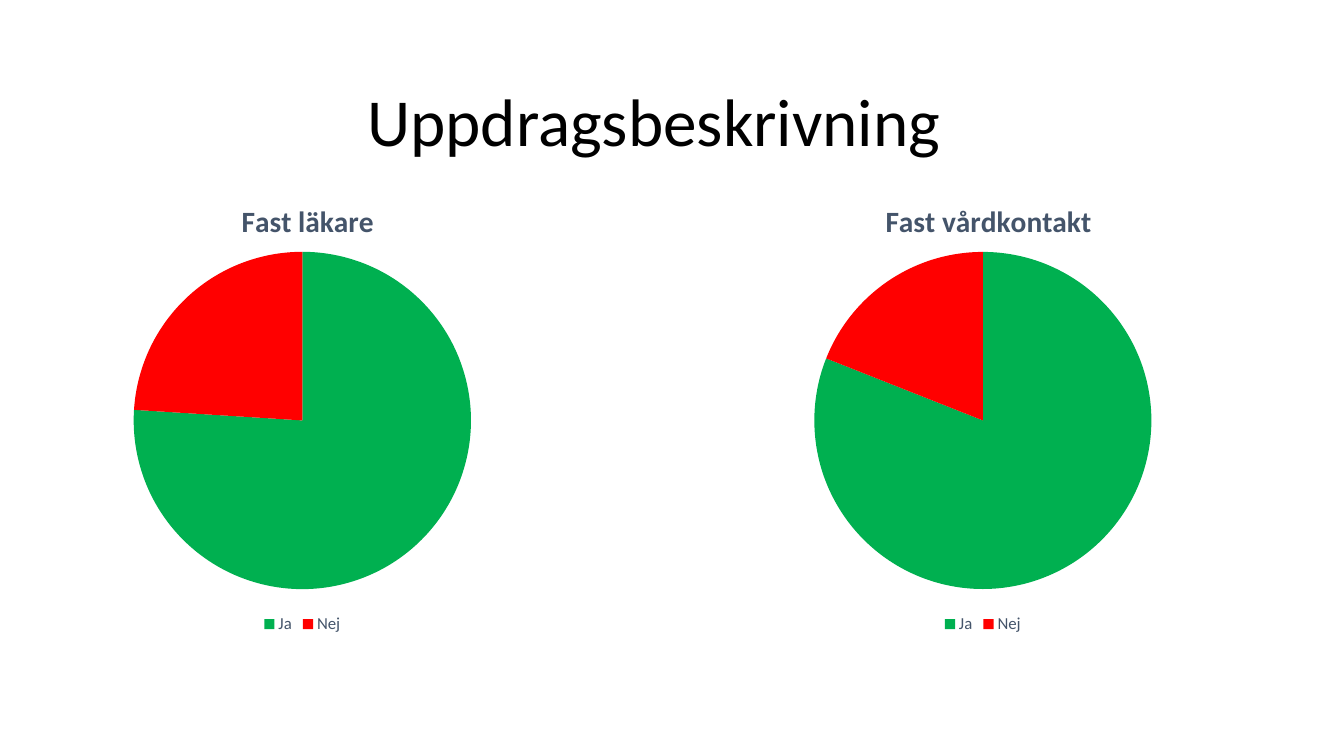
from dataclasses import dataclass

from lxml import etree
from pptx import Presentation
from pptx import util as u
from pptx.chart.data import CategoryChartData
from pptx.dml.color import RGBColor
from pptx.enum import chart as ch, text
from pptx.oxml import ns

FONT = "Calibri"
BLACK = RGBColor(0x00, 0x00, 0x00)
SLATE = RGBColor(0x44, 0x54, 0x6A)
GREEN = RGBColor(0x00, 0xB0, 0x50)
RED = RGBColor(0xFF, 0x00, 0x00)

TOP, HIGH = 4.45, 11.63  # both charts, cm
DISC = 8.5  # pie diameter, cm


@dataclass
class Pie:
    title: str
    span: float  # title width, cm
    left: float
    width: float
    shares: tuple[int, int]


PIES = [
    Pie("Fast läkare", 3.33, 0, 15.24, (76, 24)),
    Pie("Fast vårdkontakt", 5.18, 16.03, 17.48, (81, 19)),
]


def write(frame, words: str, *, size: float, color: RGBColor,
          bold: bool = False, align=text.PP_ALIGN.LEFT) -> None:
    frame.text = words
    para = frame.paragraphs[0]
    para.alignment = align
    font = para.runs[0].font
    font.name, font.size, font.bold = FONT, u.Pt(size), bold
    font.color.rgb = color


def place(item, index: int, **parts: object) -> None:
    """Give a chart part a manual layout, set as its child at index."""
    old = item.find(ns.qn("c:layout"))
    if old is not None:
        item.remove(old)
    layout = etree.Element(ns.qn("c:layout"))
    manual = etree.SubElement(layout, ns.qn("c:manualLayout"))
    for name, value in parts.items():
        etree.SubElement(manual, ns.qn(f"c:{name}"), val=str(value))
    item.insert(index, layout)


def middle(size: float, width: float) -> float:
    """Left offset, as a share of width, that centres size."""
    return round((1 - size / width) / 2, 3)


def draw(slide, pie: Pie) -> None:
    data = CategoryChartData()
    data.categories = ["Ja", "Nej"]
    data.add_series("Series 1", pie.shares)
    chart = slide.shapes.add_chart(
        ch.XL_CHART_TYPE.PIE, u.Cm(pie.left), u.Cm(TOP),
        u.Cm(pie.width), u.Cm(HIGH), data).chart
    chart.font.name, chart.font.size = FONT, u.Pt(10)
    chart.font.color.rgb = BLACK

    chart.has_title = True
    title = chart.chart_title
    write(title.text_frame, pie.title, size=21, color=SLATE, bold=True,
          align=text.PP_ALIGN.CENTER)
    title.include_in_layout = False
    place(title.element, 1, xMode="edge", yMode="edge",
          x=middle(pie.span, pie.width), y=0.04)

    chart.has_legend = True
    legend = chart.legend
    legend.position = ch.XL_LEGEND_POSITION.BOTTOM
    legend.include_in_layout = False
    legend.font.name, legend.font.size = FONT, u.Pt(12)
    legend.font.color.rgb = SLATE

    plot = chart.plots[0]
    plot.vary_by_categories = True
    for i, color in enumerate((GREEN, RED)):
        fill = plot.series[0].points[i].format.fill
        fill.solid()
        fill.fore_color.rgb = color
    area = chart.element.find(".//" + ns.qn("c:plotArea"))
    place(area, 0, layoutTarget="inner", xMode="edge", yMode="edge",
          x=middle(DISC, pie.width), y=0.163,
          w=round(DISC / pie.width, 3), h=round(DISC / HIGH, 3))


def main() -> None:
    deck = Presentation()
    deck.slide_width, deck.slide_height = u.Cm(33.87), u.Cm(19.05)
    slide = deck.slides.add_slide(deck.slide_layouts[5])
    for pie in PIES:
        draw(slide, pie)
    title = slide.shapes.title
    title.left, title.top = u.Cm(9), u.Cm(1.88)
    title.width, title.height = u.Cm(16.81), u.Cm(2.31)
    title.text_frame.vertical_anchor = text.MSO_ANCHOR.TOP
    write(title.text_frame, "Uppdragsbeskrivning", size=48, color=BLACK)
    deck.save("out.pptx")


if __name__ == "__main__":
    main()
